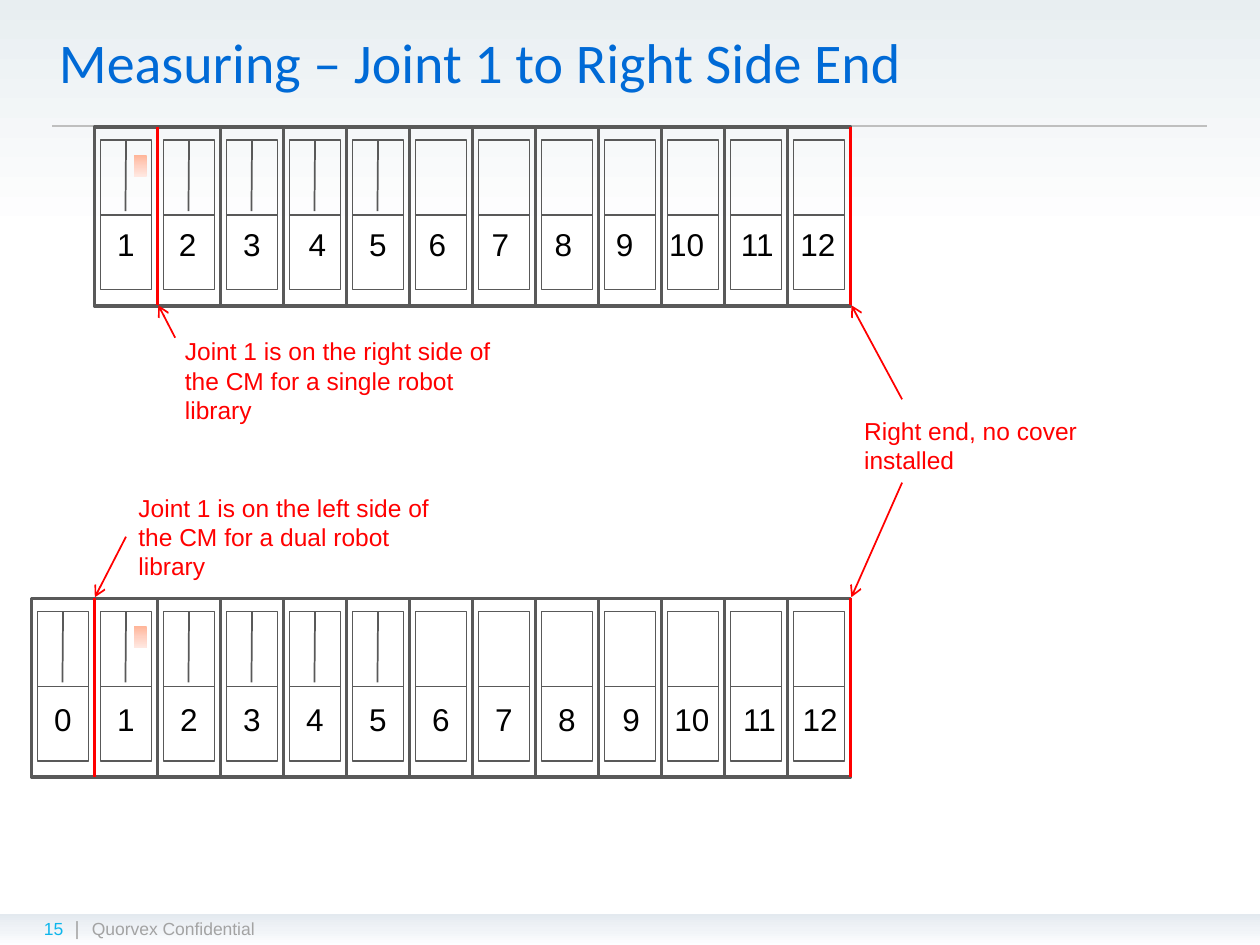
from lxml import etree
from pptx import Presentation
from pptx.dml.color import RGBColor
from pptx.enum import shapes, text
from pptx.oxml import ns, parse_xml
from pptx.util import Pt

COLORS = {"title": "006AD6", "frame": "595959", "mark": "FF0000", "label": "000000",
          "footer": "A3A3A3", "number": "0DB6EC", "rule": "BFBFBF"}
GRADIENTS = {
    "page": [(0, "E8EEF1"), (25, "FFFFFF")],
    "footer": [(0, "E3E9EF"), (50, "F0F3F7"), (100, "FDFEFF")],
    "tag": [(0, "FFB599"), (50, "FFD0C1"), (100, "FFE8E1")],
}
PITCH, HEIGHT = 36, 102.24
LAST_DIVIDED = 5


def rgb(name):
    return RGBColor.from_string(COLORS[name])


def add_rect(s, x, y, w, h, line_width=None, gradient=None):
    sp = s.shapes.add_shape(shapes.MSO_SHAPE.RECTANGLE, Pt(x), Pt(y), Pt(w), Pt(h))
    sp.shadow.inherit = False
    sp.fill.background()
    if line_width:
        sp.line.color.rgb = rgb("frame")
        sp.line.width = Pt(line_width)
    else:
        sp.line.fill.background()
    if gradient:
        stops = "".join(f'<a:gs pos="{pos * 1000}"><a:srgbClr val="{color}"/></a:gs>'
                        for pos, color in GRADIENTS[gradient])
        fill = parse_xml(f'<a:gradFill {ns.nsdecls("a")} rotWithShape="1"><a:gsLst>{stops}'
                         '</a:gsLst><a:lin ang="5400000" scaled="0"/></a:gradFill>')
        no_fill = sp._element.spPr.find(ns.qn("a:noFill"))
        no_fill.getparent().replace(no_fill, fill)
    return sp


def add_line(s, x1, y1, x2, y2, color, width, arrow=False):
    line = s.shapes.add_connector(shapes.MSO_CONNECTOR.STRAIGHT,
                                  Pt(x1), Pt(y1), Pt(x2), Pt(y2))
    line.line.color.rgb = rgb(color)
    line.line.width = Pt(width)
    if arrow:
        etree.SubElement(line.line._get_or_add_ln(), ns.qn("a:tailEnd"), type="arrow")
    etree.SubElement(line._element.spPr, ns.qn("a:effectLst"))
    return line


def add_text(s, x, y, w, h, words, size, color, font="Arial", wrap=True, grow=True,
             align=text.PP_ALIGN.LEFT):
    tf = s.shapes.add_textbox(Pt(x), Pt(y), Pt(w), Pt(h)).text_frame
    tf.word_wrap = wrap
    if grow:
        tf.auto_size = text.MSO_AUTO_SIZE.SHAPE_TO_FIT_TEXT
    p = tf.paragraphs[0]
    p.alignment = align
    r = p.add_run()
    r.text = words
    r.font.size, r.font.name = Pt(size), font
    r.font.color.rgb = rgb(color)


def add_backdrop(s, w, h):
    add_rect(s, 0, 0, w, h, gradient="page")
    add_rect(s, 0, h - 18, w, 18, gradient="footer")
    add_line(s, 30, 72, w - 30, 72, "rule", 0.75)


def add_footer(s, x, y):
    add_text(s, x, y, 36.7, 19.4, "15", 10, "number", grow=False)
    add_text(s, x + 18, y - 1.4, 13.7, 19.4, "|", 11, "footer", grow=False)
    add_text(s, x + 27.4, y, 360, 33.8, "Quorvex Confidential", 10, "footer", grow=False)


def add_module(s, x, y, number, label_y, nudge):
    """One cabinet; nudge shifts its number off centre."""
    add_rect(s, x, y, PITCH, HEIGHT, 2)
    inner = add_rect(s, x + 3.6, y + 7.4, 28.9, 85.6, 0.75)
    shelf = add_line(s, x + 3.6, y + 50, x + 32.5, y + 50, "frame", 0.75)
    shelf.begin_connect(inner, 1)
    shelf.end_connect(inner, 3)
    if number <= LAST_DIVIDED:
        divider = add_line(s, x + 18, y + 7.4, x + 17.7, y + 48, "frame", 1)
        divider.begin_connect(inner, 0)
    if number == 1:
        add_rect(s, x + 22.7, y + 16, 7.2, 12.2, gradient="tag")
    width = 24.5 if number < 10 else 34.5
    add_text(s, x + (PITCH - width) / 2 + nudge, y + label_y, width, 29, str(number),
             18, "label", wrap=False, align=text.PP_ALIGN.CENTER)


def add_library(s, x, y, numbers, joint_after, label_y, nudges):
    """A row of modules with the joint and the right end marked in red."""
    for i, number in enumerate(numbers):
        add_module(s, x + i * PITCH, y, number, label_y, nudges.get(number, 0))
    for edge in (joint_after, len(numbers)):
        line_x = x + edge * PITCH
        add_line(s, line_x, y, line_x, y + HEIGHT - 0.3, "mark", 1.75)


def add_callout(s, x, y, w, h, words, arrows):
    add_text(s, x, y, w, h, words, 14, "mark")
    for ends in arrows:
        add_line(s, *ends, "mark", 1, arrow=True)


def main():
    prs = Presentation()
    prs.slide_width, prs.slide_height = Pt(720), Pt(540)
    s = prs.slides.add_slide(prs.slide_layouts[6])
    add_backdrop(s, 720, 540)
    add_footer(s, 18, 521.3)
    add_text(s, 26.6, 12.2, 615, 46.1, "Measuring – Joint 1 to Right Side End",
             32, "title", "Calibri")
    add_library(s, 54, 72.6, range(1, 13), 1, 52.7,
                {2: -0.7, 4: 1.4, 6: -2, 7: -2, 8: -2, 9: -3, 10: -3.6, 11: 0.7, 12: -0.7})
    add_library(s, 18, 341.9, range(13), 1, 54.8, {9: 0.7, 10: -0.7, 11: 2, 12: 0.7})
    add_callout(s, 486.7, 234, 154.8, 41.2, "Right end, no cover installed",
                [(515.5, 275.8, 486.5, 341.3), (515.5, 228.2, 486.5, 174.4)])
    add_callout(s, 98.6, 188.6, 192.2, 58.2,
                "Joint 1 is on the right side of the CM for a single robot library",
                [(100.1, 193, 90.5, 174.4)])
    add_callout(s, 72, 277.9, 186.5, 58.2,
                "Joint 1 is on the left side of the CM for a dual robot library",
                [(72, 306.7, 54.2, 341.3)])
    prs.save("out.pptx")


if __name__ == "__main__":
    main()
